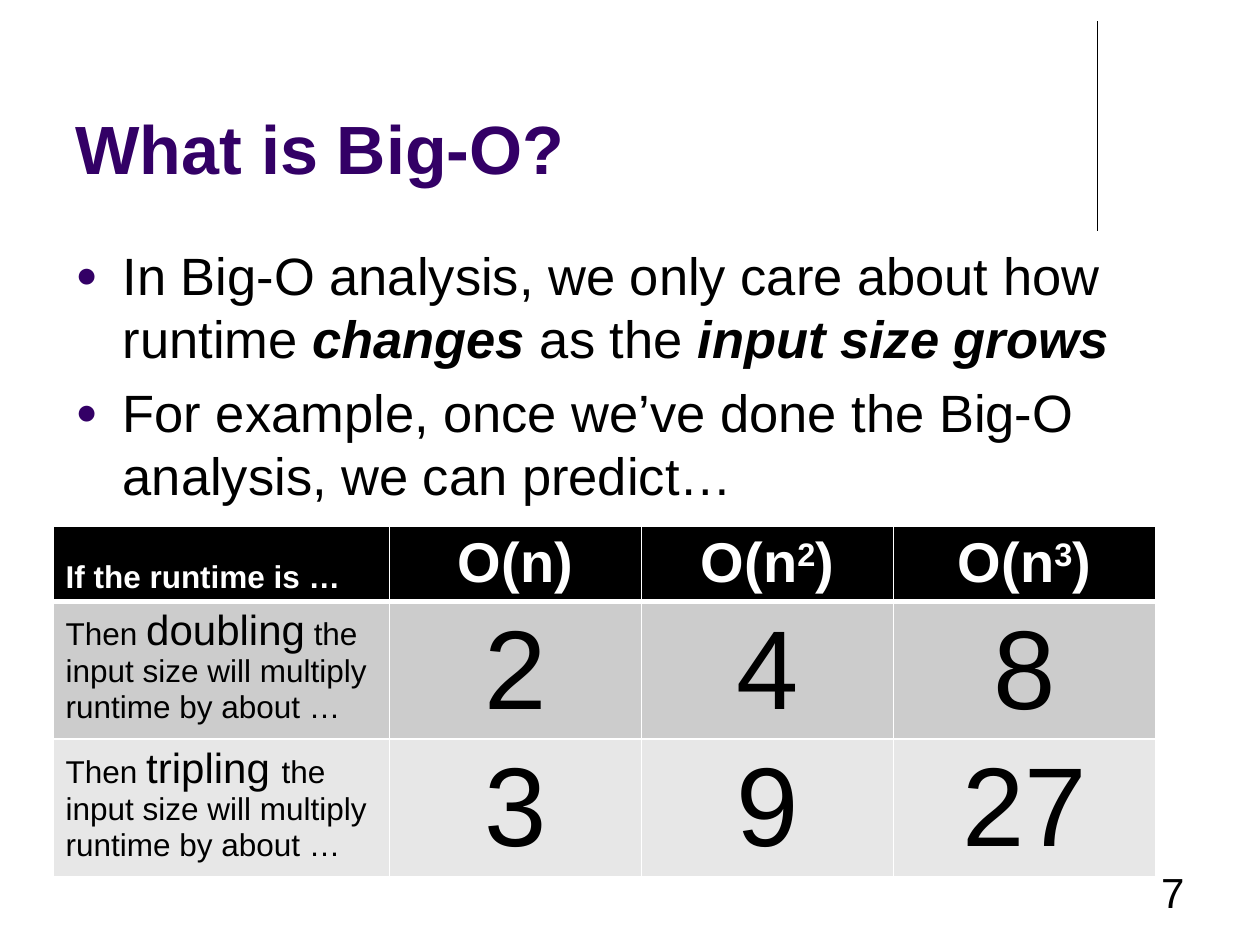
import dataclasses

import pptx
import pptx.dml.color
import pptx.enum.shapes
import pptx.enum.text
import pptx.oxml
import pptx.oxml.ns
import pptx.util

Cm = pptx.util.Cm
Align = pptx.enum.text.PP_ALIGN
Anchor = pptx.enum.text.MSO_ANCHOR


@dataclasses.dataclass(frozen=True)
class Theme:
    font: str = "Arial"
    ink: str = "000000"
    paper: str = "FFFFFF"
    accent: str = "330066"
    row_fills: tuple = ("000000", "CCCCCC", "E7E7E7")
    title_size: int = 39
    body_size: int = 30
    heading_size: int = 32
    factor_size: int = 64
    label_size: int = 18
    emphasis_size: int = 24


THEME = Theme()


def rgb(color):
    return pptx.dml.color.RGBColor.from_string(color)


def add_xml(parent, tag, content="", **attributes):
    """Append one DrawingML element, with optional inner markup."""
    listed = " ".join(f'{name}="{value}"' for name, value in attributes.items())
    namespace = pptx.oxml.ns.nsdecls("a")
    parent.append(pptx.oxml.parse_xml(f"<a:{tag} {namespace} {listed}>{content}</a:{tag}>"))


def add_text(para, text, size, color=THEME.ink, bold=False, italic=False, raised=False):
    span = para.add_run()
    span.text = text
    font = span.font
    font.name, font.size = THEME.font, pptx.util.Pt(size)
    font.bold, font.italic = bold, italic
    font.color.rgb = rgb(color)
    if raised:
        font._element.set("baseline", "30000")


class SlideBuilder:
    def __init__(self, deck, theme):
        self.theme = theme
        self.slide = deck.slides.add_slide(deck.slide_layouts[1])

    def place(self, shape, left, top, width, height, anchor=Anchor.TOP):
        shape.left, shape.top = Cm(left), Cm(top)
        shape.width, shape.height = Cm(width), Cm(height)
        frame = shape.text_frame
        frame.word_wrap = True
        frame.auto_size = pptx.enum.text.MSO_AUTO_SIZE.NONE
        frame.vertical_anchor = anchor
        return frame

    def line(self, left, top, right, bottom):
        line = self.slide.shapes.add_connector(
            pptx.enum.shapes.MSO_CONNECTOR.STRAIGHT, Cm(left), Cm(top), Cm(right), Cm(bottom))
        line.line.color.rgb = rgb(self.theme.ink)
        line.line.width = pptx.util.Pt(0.75)
        add_xml(line._element.spPr, "effectLst")

    def title(self, text, *bounds):
        para = self.place(self.slide.shapes.title, *bounds, anchor=Anchor.BOTTOM).paragraphs[0]
        para.alignment = Align.LEFT
        add_text(para, text, self.theme.title_size, self.theme.accent, bold=True)

    def bullets(self, items, *bounds):
        """Fill the body; each item is a list of (text, stressed) pairs."""
        frame = self.place(self.slide.placeholders[1], *bounds)
        for index, item in enumerate(items):
            para = frame.add_paragraph() if index else frame.paragraphs[0]
            properties = para._p.get_or_add_pPr()
            properties.set("marL", str(Cm(0.95)))
            properties.set("indent", str(Cm(-0.95)))
            add_xml(properties, "buClr", f'<a:srgbClr val="{self.theme.accent}"/>')
            add_xml(properties, "buSzPct", val=70000)
            add_xml(properties, "buFont", typeface=self.theme.font)
            add_xml(properties, "buChar", char="●")
            para.space_before = pptx.util.Pt(6 if index else 0)
            for text, stressed in item:
                add_text(para, text, self.theme.body_size, bold=stressed, italic=stressed)

    def page_number(self, text, *bounds):
        box = self.slide.shapes.add_textbox(0, 0, 0, 0)
        para = self.place(box, *bounds).paragraphs[0]
        para.alignment = Align.RIGHT
        add_text(para, text, self.theme.emphasis_size)

    def table(self, rows, left, top, widths, heights):
        """Draw rows of cells; each cell is a list of (text, format) pairs."""
        table = self.slide.shapes.add_table(
            len(rows), len(widths), Cm(left), Cm(top), Cm(sum(widths)), Cm(sum(heights))).table
        for column, width in zip(table.columns, widths):
            column.width = Cm(width)
        for row, height in zip(table.rows, heights):
            row.height = Cm(height)
        for row_index, cells in enumerate(rows):
            for column_index, spans in enumerate(cells):
                cell = table.cell(row_index, column_index)
                para = cell.text_frame.paragraphs[0]
                para.alignment = Align.CENTER if column_index else Align.LEFT
                for text, style in spans:
                    add_text(para, text, **style)
                self.borders(cell, top=3 if row_index == 1 else 1, bottom=1 if row_index else 3)
                cell.fill.solid()
                cell.fill.fore_color.rgb = rgb(self.theme.row_fills[row_index])
        table.cell(0, 0).vertical_anchor = Anchor.BOTTOM

    def borders(self, cell, top, bottom):
        paint = f'<a:solidFill><a:srgbClr val="{self.theme.paper}"/></a:solidFill>'
        for side, points in (("L", 1), ("R", 1), ("T", top), ("B", bottom)):
            add_xml(cell._tc.get_or_add_tcPr(), f"ln{side}", paint, w=pptx.util.Pt(points))


def runtime_rows(theme):
    heading = {"size": theme.heading_size, "color": theme.paper, "bold": True}
    label = {"size": theme.label_size}
    emphasis = {"size": theme.emphasis_size}
    factor = {"size": theme.factor_size}
    header = [[("If the runtime is …", {**heading, **label})], [("O(n)", heading)]]
    for power in "23":
        header.append([("O(n", heading), (power, {**heading, "raised": True}), (")", heading)])
    rows = [header]
    for base, action, rest in (
            (2, "doubling", " the input size will multiply runtime by about …"),
            (3, "tripling ", "the input size will multiply runtime by about …")):
        factors = [[(str(base ** power), factor)] for power in (1, 2, 3)]
        rows.append([[("Then ", label), (action, emphasis), (rest, label)], *factors])
    return rows


def main():
    deck = pptx.Presentation()
    deck.slide_width, deck.slide_height = Cm(25.4), Cm(19.05)
    builder = SlideBuilder(deck, THEME)
    builder.line(22.12, 0.43, 22.12, 4.65)
    builder.title("What is Big-O?", 1.27, 0.33, 20.95, 3.6)
    builder.bullets([
        [("In Big-O analysis, we only care about how runtime ", False), ("changes", True),
         (" as the ", False), ("input size grows", True)],
        [("For example, once we’ve done the Big-O analysis, we can predict…", False)],
    ], 1.27, 4.78, 22.86, 12.24)
    builder.page_number("7", 18.21, 17.35, 5.92, 1.27)
    builder.table(runtime_rows(THEME), 1.07, 10.6, (6.78, 5.08, 5.08, 5.28), (1.5, 2.75, 2.75))
    deck.save("out.pptx")


if __name__ == "__main__":
    main()
